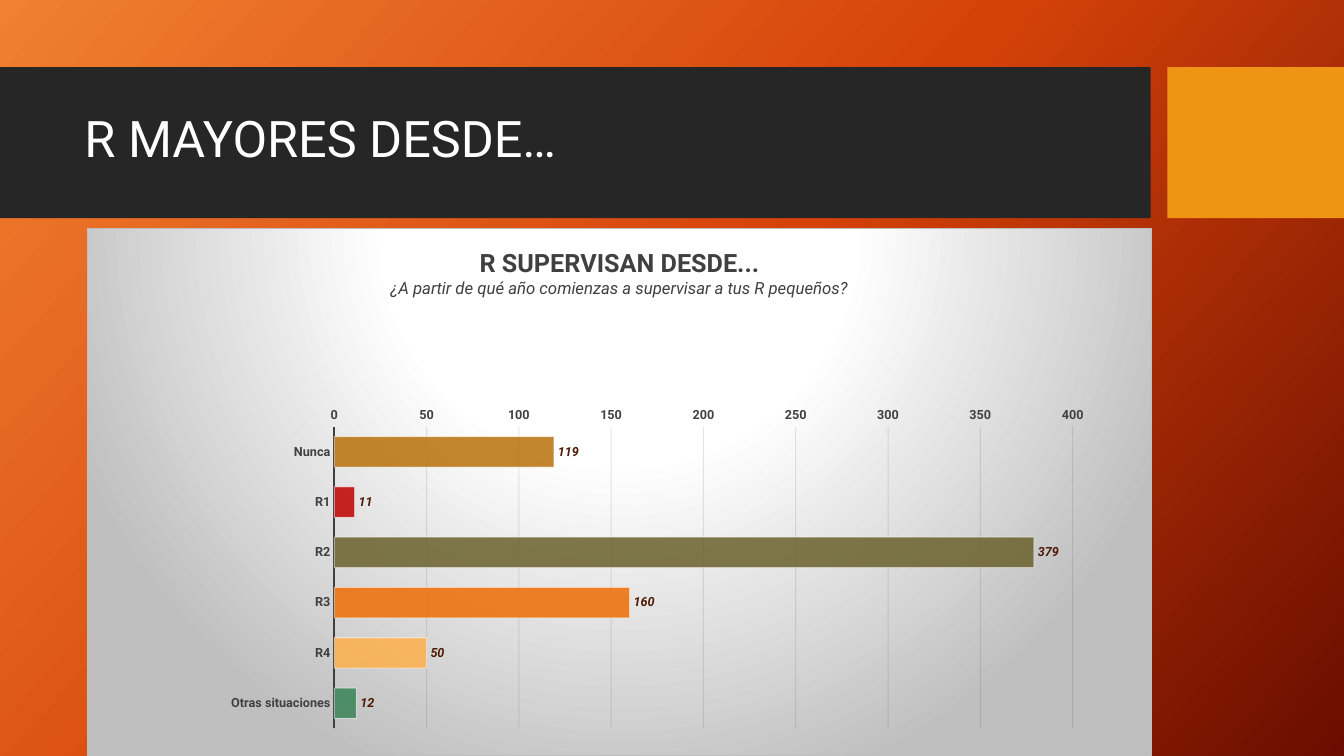
from pptx import Presentation
from pptx.chart.data import CategoryChartData
from pptx.dml.color import RGBColor
from pptx.enum.chart import XL_CHART_TYPE as ChartType
from pptx.enum.chart import XL_LABEL_POSITION as LabelPosition
from pptx.enum.chart import XL_TICK_MARK as TickMark
from pptx.enum.shapes import MSO_SHAPE as Preset
from pptx.enum.text import MSO_ANCHOR as Anchor
from pptx.oxml import parse_xml
from pptx.oxml.ns import nsdecls, qn
from pptx.util import Cm, Pt

FONT = "Roboto"
GREY = "404040"
SLIDE_WIDTH, SLIDE_HEIGHT = 33.87, 19.05
BAND_TOP, BAND_HEIGHT = 1.69, 3.81
ANSWERS = [
    ("Nunca", 119, "B8700C"),
    ("R1", 11, "C00000"),
    ("R2", 379, "6A612C"),
    ("R3", 160, "EE6E04"),
    ("R4", 50, "FCB04A"),
    ("Otras situaciones", 12, "388356"),
]


def color(hex_value):
    return RGBColor.from_string(hex_value)


def style_font(font, size, hex_value, bold=False, italic=False):
    font.name = FONT
    font.size = Pt(size)
    font.bold = bold
    font.italic = italic
    font.color.rgb = color(hex_value)


def add_text(paragraph, text, **font_format):
    run = paragraph.add_run()
    run.text = text
    style_font(run.font, **font_format)


def paint(fill, hex_value, opacity=100):
    fill.solid()
    fill.fore_color.rgb = color(hex_value)
    if opacity < 100:
        color_element = fill._xPr.find(".//" + qn("a:srgbClr"))
        color_element.append(parse_xml(
            f'<a:alpha {nsdecls("a")} val="{opacity * 1000}"/>'))


def draw_line(line, hex_value, width, opacity=100):
    line.width = Pt(width)
    paint(line.fill, hex_value, opacity)


def gradient_xml(stops, direction):
    stop_list = "".join(
        f'<a:gs pos="{position * 1000}"><a:srgbClr val="{hex_value}"/></a:gs>'
        for position, hex_value in stops)
    return (f'<a:gradFill {nsdecls("a")} rotWithShape="1">'
            f"<a:gsLst>{stop_list}</a:gsLst>{direction}</a:gradFill>")


def paint_background(slide):
    slide.background.fill.gradient()
    gradient = slide._element.find(".//" + qn("a:gradFill"))
    stops = [(0, "F18031"), (50, "D54209"), (100, "6A0D00")]
    direction = f'<a:lin ang="{42 * 60000}" scaled="0"/>'
    gradient.getparent().replace(
        gradient, parse_xml(gradient_xml(stops, direction)))


def add_block(slide, left, top, width, height, hex_value):
    block = slide.shapes.add_shape(
        Preset.RECTANGLE, Cm(left), Cm(top), Cm(width), Cm(height))
    block.shadow.inherit = False
    paint(block.fill, hex_value)
    block.line.fill.background()


def add_header(slide, left, top, width, height):
    accent_width = 4.45
    band_width = width - accent_width - 0.42
    add_block(slide, left, top, band_width, height, "262626")
    add_block(slide, left + width - accent_width, top,
              accent_width, height, "F09415")
    box = slide.shapes.add_textbox(
        Cm(left + 1.88), Cm(top + 0.38), Cm(26.7), Cm(3))
    frame = box.text_frame
    frame.word_wrap = True
    frame.vertical_anchor = Anchor.MIDDLE
    paragraph = frame.paragraphs[0]
    paragraph.line_spacing = 0.9
    add_text(paragraph, "R MAYORES DESDE…", size=36, hex_value="FFFFFF")


def title_chart(chart):
    frame = chart.chart_title.text_frame
    add_text(frame.paragraphs[0], "R SUPERVISAN DESDE...",
             size=18, hex_value=GREY, bold=True)
    add_text(frame.add_paragraph(),
             "¿A partir de qué año comienzas a supervisar a tus R pequeños?",
             size=12, hex_value=GREY, italic=True)
    chart.chart_title.include_in_layout = False


def place_plot(chart, x, y, w, h):
    plot_area = chart._chartSpace.find(".//" + qn("c:plotArea"))
    for layout in plot_area.findall(qn("c:layout")):
        plot_area.remove(layout)
    parts = '<c:layoutTarget val="inner"/>'
    parts += '<c:xMode val="edge"/><c:yMode val="edge"/>'
    for name, value in (("x", x), ("y", y), ("w", w), ("h", h)):
        parts += f'<c:{name} val="{value}"/>'
    plot_area.insert(0, parse_xml(
        f'<c:layout {nsdecls("c")}><c:manualLayout>{parts}'
        "</c:manualLayout></c:layout>"))


def paint_chart_area(chart):
    stops = [(0, "FFFFFF"), (39, "FFFFFF"), (100, "BFBFBF")]
    direction = ('<a:path path="circle"><a:fillToRect l="50000" t="-80000" '
                 'r="50000" b="180000"/></a:path>')
    area = parse_xml(
        f'<c:spPr {nsdecls("c", "a")}>{gradient_xml(stops, direction)}'
        f'<a:ln w="{Pt(0.75)}"><a:solidFill><a:srgbClr val="BFBFBF"/>'
        "</a:solidFill></a:ln></c:spPr>")
    chart._chartSpace.find(qn("c:txPr")).addprevious(area)


def style_axes(chart):
    for axis in (chart.category_axis, chart.value_axis):
        axis.major_tick_mark = axis.minor_tick_mark = TickMark.NONE
        style_font(axis.tick_labels.font, 9, GREY, bold=True)
    chart.category_axis.reverse_order = True
    chart.category_axis.has_major_gridlines = False
    draw_line(chart.category_axis.format.line, GREY, 1.5)
    value_axis = chart.value_axis
    value_axis.minimum_scale = 0
    value_axis.maximum_scale = 400
    value_axis.major_unit = 50
    value_axis.format.line.fill.background()
    value_axis.has_major_gridlines = True
    draw_line(value_axis.major_gridlines.format.line, "0D0D0D", 0.75, 10)


def style_bars(plot):
    plot.gap_width = 65
    plot.vary_by_categories = False
    series = plot.series[0]
    paint(series.format.fill, "F09415", 85)
    draw_line(series.format.line, "FFFFFF", 0.75, 50)
    for index, (_, _, hex_value) in enumerate(ANSWERS):
        point_format = series.points[index].format
        paint(point_format.fill, hex_value, 85)
        draw_line(point_format.line, "FFFFFF", 0.75, 50)
    labels = series.data_labels
    labels.show_value = True
    labels.position = LabelPosition.OUTSIDE_END
    style_font(labels.font, 9, "4E1B07", bold=True, italic=True)


def add_supervision_chart(slide, left, top, width, height):
    data = CategoryChartData()
    data.categories = [name for name, _, _ in ANSWERS]
    data.add_series("Series 1", [value for _, value, _ in ANSWERS])
    chart = slide.shapes.add_chart(
        ChartType.BAR_CLUSTERED, Cm(left), Cm(top), Cm(width), Cm(height),
        data).chart
    style_font(chart.font, 10, "FFFFFF")
    chart.has_legend = False
    title_chart(chart)
    place_plot(chart, 0.232, 0.376, 0.694, 0.573)
    paint_chart_area(chart)
    style_axes(chart)
    style_bars(chart.plots[0])


def main():
    presentation = Presentation()
    presentation.slide_width = Cm(SLIDE_WIDTH)
    presentation.slide_height = Cm(SLIDE_HEIGHT)
    slide = presentation.slides.add_slide(presentation.slide_layouts[6])
    paint_background(slide)
    add_header(slide, 0, BAND_TOP, SLIDE_WIDTH, BAND_HEIGHT)
    chart_top = BAND_TOP + BAND_HEIGHT + 0.25
    add_supervision_chart(slide, 2.19, chart_top, 26.84,
                          SLIDE_HEIGHT - chart_top)
    presentation.save("out.pptx")


if __name__ == "__main__":
    main()
